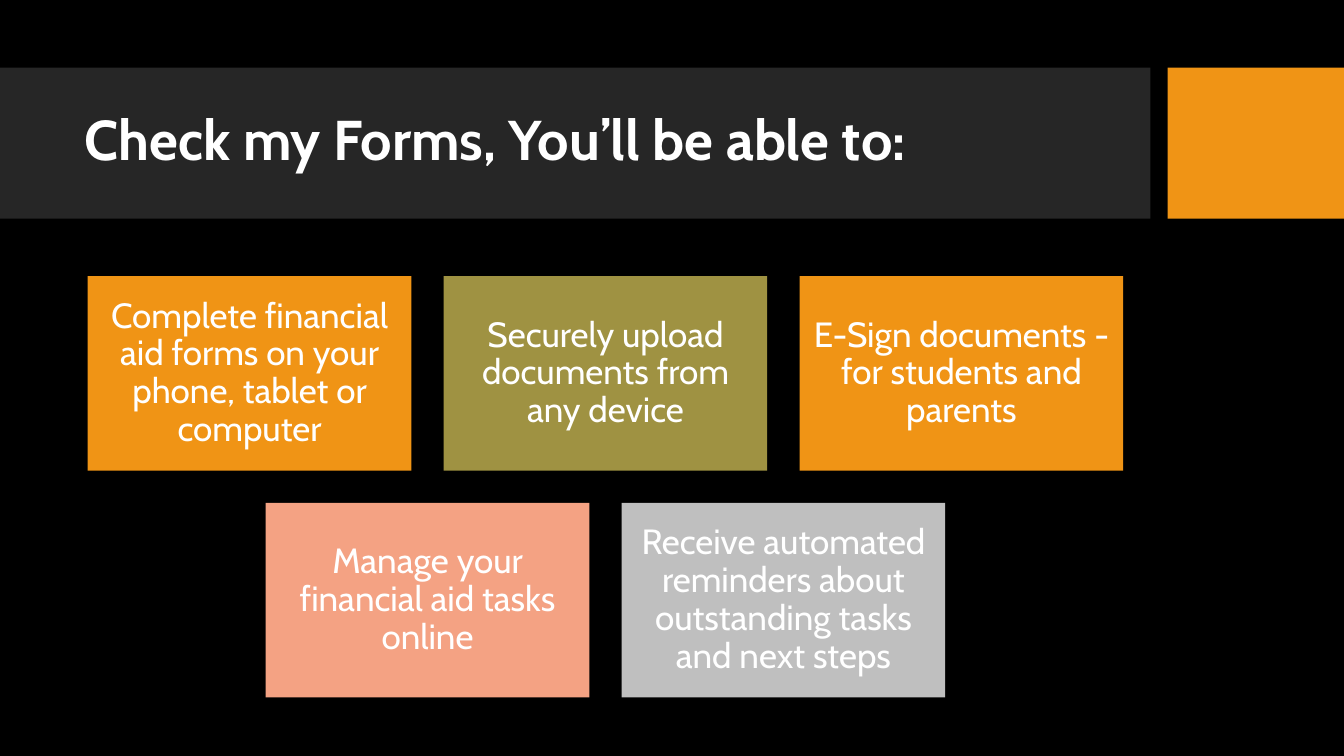
from dataclasses import dataclass

from pptx import Presentation
from pptx.dml import color
from pptx.enum import shapes, text
from pptx.util import Inches, Pt

FONT = "Cabin"
WHITE, BLACK, CHARCOAL, ORANGE = "FFFFFF", "000000", "262626", "F09415"

# Card grid: columns may be fractional, so the second row sits half a step in
GRID_LEFT, GRID_TOP = 0.87, 2.74
CARD_WIDTH, CARD_HEIGHT = 3.21, 1.93
COLUMN_STEP, ROW_STEP = 3.53, 2.25


@dataclass(frozen=True)
class Box:
    left: float
    top: float
    width: float
    height: float

    def lengths(self) -> list:
        return [Inches(v) for v in (self.left, self.top, self.width, self.height)]


@dataclass(frozen=True)
class Card:
    column: float
    row: int
    fill: str
    wording: str

    def box(self) -> Box:
        return Box(GRID_LEFT + self.column * COLUMN_STEP,
                   GRID_TOP + self.row * ROW_STEP, CARD_WIDTH, CARD_HEIGHT)


CARDS = [
    Card(0, 0, ORANGE, "Complete financial aid forms on your phone, tablet or computer"),
    Card(1, 0, "9F9242", "Securely upload documents from any device"),
    Card(2, 0, ORANGE, "E-Sign documents - for students and parents"),
    Card(0.5, 1, "F4A283", "Manage your financial aid tasks online"),
    Card(1.5, 1, "BFBFBF",
         "Receive automated reminders about outstanding tasks and next steps"),
]


def paint(fill, colour: str) -> None:
    fill.solid()
    fill.fore_color.rgb = color.RGBColor.from_string(colour)


def add_rectangle(slide, box: Box, colour: str):
    shape = slide.shapes.add_shape(shapes.MSO_SHAPE.RECTANGLE, *box.lengths())
    shape.shadow.inherit = False
    paint(shape.fill, colour)
    shape.line.fill.background()
    return shape


def write(shape, wording: str, size: float, alignment, bold: bool = False) -> None:
    frame = shape.text_frame
    frame.word_wrap = True
    frame.vertical_anchor = text.MSO_ANCHOR.MIDDLE
    frame.margin_left = frame.margin_right = Inches(0.1)
    frame.margin_top = frame.margin_bottom = Inches(0.1)
    paragraph = frame.paragraphs[0]
    paragraph.alignment = alignment
    paragraph.line_spacing = 0.9
    run = paragraph.add_run()
    run.text = wording
    run.font.name = FONT
    run.font.size = Pt(size)
    run.font.bold = bold
    paint(run.font.fill, WHITE)


def main() -> None:
    presentation = Presentation()
    presentation.slide_width = Inches(13.33)
    presentation.slide_height = Inches(7.5)
    slide = presentation.slides.add_slide(presentation.slide_layouts[6])
    paint(slide.background.fill, BLACK)

    # Title band and accent block
    add_rectangle(slide, Box(0, 0.67, 11.41, 1.5), CHARCOAL)
    add_rectangle(slide, Box(11.58, 0.67, 1.75, 1.5), ORANGE)
    title = slide.shapes.add_textbox(*Box(0.74, 0.82, 10.51, 1.18).lengths())
    write(title, "Check my Forms, You’ll be able to:", 40, text.PP_ALIGN.LEFT, bold=True)

    # Feature cards
    for card in CARDS:
        shape = add_rectangle(slide, card.box(), card.fill)
        write(shape, card.wording, 25, text.PP_ALIGN.CENTER)

    presentation.save("out.pptx")


if __name__ == "__main__":
    main()
